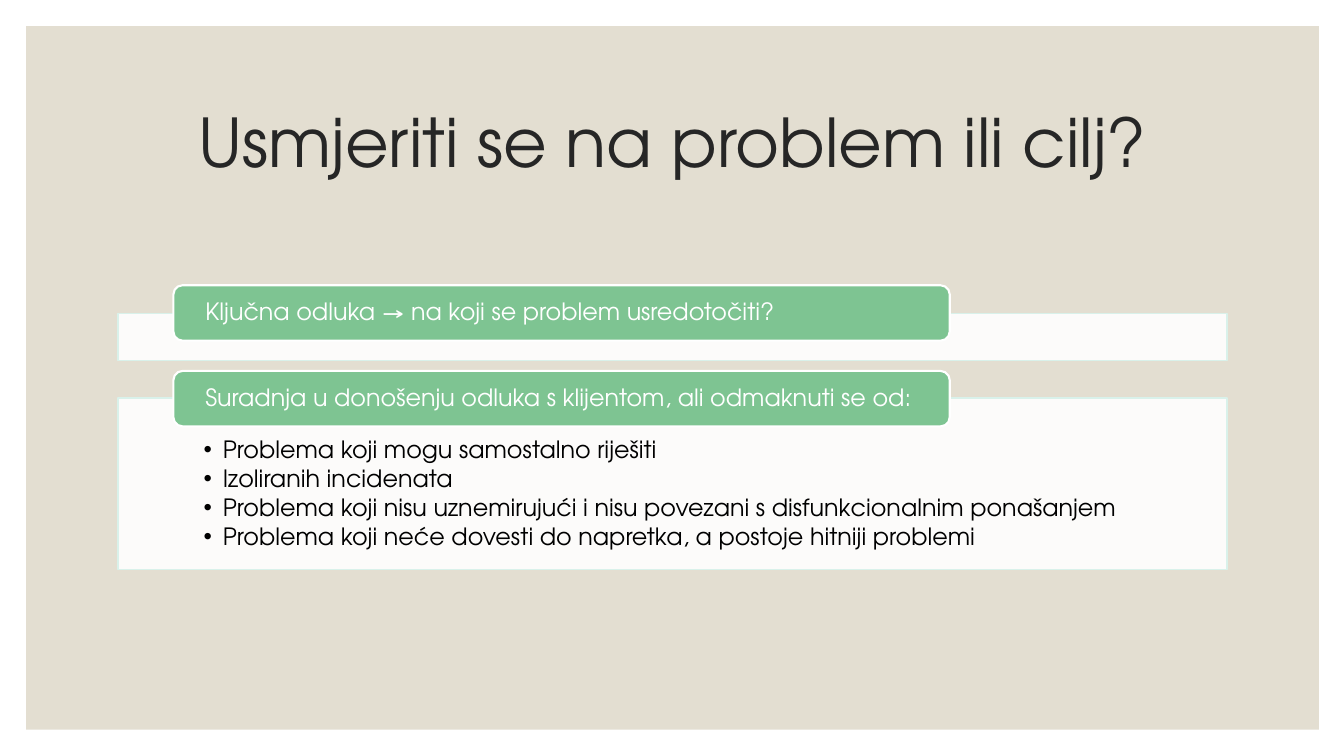
import dataclasses

import lxml.etree
import pptx
import pptx.dml.color
import pptx.enum.shapes
import pptx.enum.text
import pptx.oxml.ns
import pptx.util

Inches = pptx.util.Inches
Pt = pptx.util.Pt
Shape = pptx.enum.shapes.MSO_SHAPE
Align = pptx.enum.text.PP_ALIGN
Anchor = pptx.enum.text.MSO_ANCHOR
qn = pptx.oxml.ns.qn

FACE = "TeX Gyre Adventor"
HUES = {
    "white": "FFFFFF",
    "sand": "E3DED1",
    "green": "7EC492",
    "mint": "D9F1EA",
    "ink": "262626",
    "black": "000000",
}


@dataclasses.dataclass(frozen=True)
class Box:
    left: float
    top: float
    width: float
    height: float


@dataclasses.dataclass(frozen=True)
class Tag:
    text: str
    top: float


BACK = Box(0.26, 0.26, 12.82, 6.98)
HEAD = Box(1.17, 0.7, 11, 1.5)
PANEL = Box(1.17, 3.11, 11, 0.47)
LIST = Box(1.17, 3.95, 11, 1.7)
TAGS = [
    Tag("Ključna odluka → na koji se problem usredotočiti?", 2.83),
    Tag("Suradnja u donošenju odluka s klijentom, ali odmaknuti se od:", 3.68),
]
ITEMS = [
    "Problema koji mogu samostalno riješiti",
    "Izoliranih incidenata",
    "Problema koji nisu uznemirujući i nisu povezani s disfunkcionalnim ponašanjem",
    "Problema koji neće dovesti do napretka, a postoje hitniji problemi",
]


def get_hue(name: str) -> pptx.dml.color.RGBColor:
    return pptx.dml.color.RGBColor.from_string(HUES[name])


def place(shape, box: Box) -> None:
    shape.left, shape.top = Inches(box.left), Inches(box.top)
    shape.width, shape.height = Inches(box.width), Inches(box.height)


def paint(shape, fill: str, line: str = "", width: float = 1) -> None:
    shape.fill.solid()
    shape.fill.fore_color.rgb = get_hue(fill)
    if line:
        shape.line.color.rgb = get_hue(line)
        shape.line.width = Pt(width)
    else:
        shape.line.fill.background()


def paint_panel(shape) -> None:
    paint(shape, "white", "mint")
    tint = shape.element.spPr.find(qn("a:solidFill"))[0]
    lxml.etree.SubElement(tint, qn("a:alpha"), val="90000")


def add_box(slide, kind, box: Box):
    shape = slide.shapes.add_shape(kind, 0, 0, 0, 0)
    place(shape, box)
    shape.shadow.inherit = False
    return shape


def set_frame(shape, anchor, left: float, top: float, base: float):
    frame = shape.text_frame
    frame.word_wrap = True
    frame.auto_size = pptx.enum.text.MSO_AUTO_SIZE.NONE
    frame.vertical_anchor = anchor
    frame.margin_left = frame.margin_right = Inches(left)
    frame.margin_top, frame.margin_bottom = Inches(top), Inches(base)
    return frame


def style(para, size: float, hue: str, align=Align.LEFT, after: float = 0) -> None:
    para.alignment = align
    para.line_spacing = 0.9
    para.space_before = Pt(0)
    para.space_after = Pt(after)
    para.font.name = FACE
    para.font.size = Pt(size)
    para.font.color.rgb = get_hue(hue)


def add_dot(para) -> None:
    props = para._p.get_or_add_pPr()
    props.set("marL", str(Inches(0.19)))
    props.set("indent", str(-Inches(0.19)))
    dot = lxml.etree.Element(qn("a:buChar"), char="•")
    props.find(qn("a:defRPr")).addprevious(dot)


def add_tag(slide, tag: Tag) -> None:
    shape = add_box(slide, Shape.ROUNDED_RECTANGLE, Box(1.72, tag.top, 7.7, 0.55))
    paint(shape, "green", "white", 1.5)
    frame = set_frame(shape, Anchor.MIDDLE, 0.29, 0, 0)
    frame.text = tag.text
    style(frame.paragraphs[0], 17, "white")


def fill_title(shape) -> None:
    place(shape, HEAD)
    frame = set_frame(shape, Anchor.MIDDLE, 0.1, 0.05, 0.05)
    frame.text = "Usmjeriti se na problem ili cilj?"
    style(frame.paragraphs[0], 48, "ink", Align.CENTER)


def fill_list(shape) -> None:
    place(shape, LIST)
    paint_panel(shape)
    frame = set_frame(shape, Anchor.TOP, 0.85, 0.39, 0.13)
    frame.text = "\n".join(ITEMS)
    for para in frame.paragraphs:
        para.level = 1
        style(para, 17, "black", after=2.5)
        add_dot(para)


def main() -> None:
    deck = pptx.Presentation()
    deck.slide_width, deck.slide_height = Inches(13.33), Inches(7.5)
    slide = deck.slides.add_slide(deck.slide_layouts[1])
    back = add_box(slide, Shape.RECTANGLE, BACK)
    paint(back, "sand")
    slide.shapes.title.element.addprevious(back.element)
    fill_title(slide.shapes.title)
    fill_list(slide.placeholders[1])
    paint_panel(add_box(slide, Shape.RECTANGLE, PANEL))
    for tag in TAGS:
        add_tag(slide, tag)
    deck.save("out.pptx")


if __name__ == "__main__":
    main()
